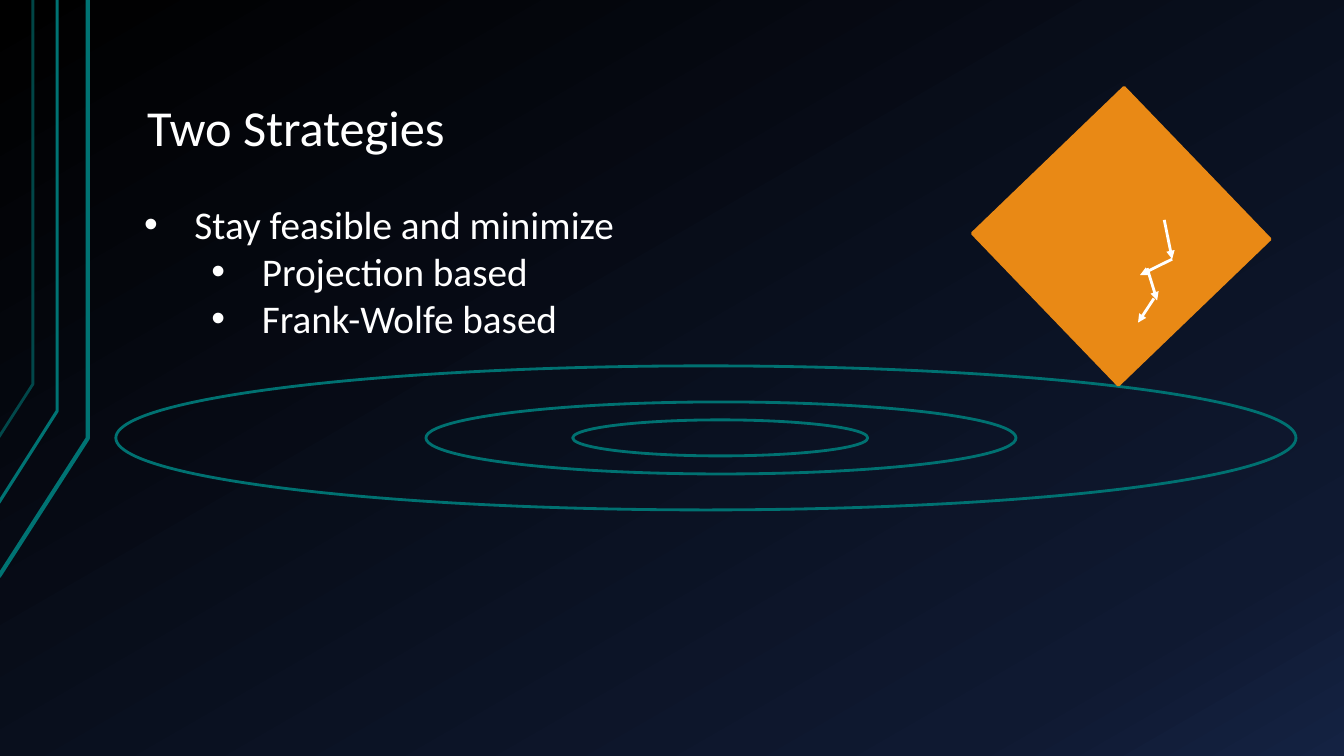
from copy import deepcopy

from lxml.etree import SubElement
from pptx import Presentation
from pptx.dml.color import RGBColor
from pptx.enum.shapes import MSO_CONNECTOR, MSO_SHAPE
from pptx.enum.text import MSO_ANCHOR, MSO_AUTO_SIZE, PP_ALIGN
from pptx.oxml.ns import qn
from pptx.util import Cm, Pt

COLORS = {
    "black": "000000",
    "navy": "0F1931",
    "blue": "142242",
    "edge": "007373",
    "ripple": "007171",
    "orange": "E98915",
    "white": "FFFFFF",
}


def color(name):
    """Return the named colour."""
    return RGBColor.from_string(COLORS[name])


def style_line(shape, color_name, width):
    """Give a shape or connector a solid line."""
    shape.line.color.rgb = color(color_name)
    shape.line.width = Pt(width)


def write_text(paragraph, text, size=28, bullet_indent=None, level=0, line_spacing=None):
    """Write formatted text, with a hanging bullet if an indent is given."""
    paragraph.alignment = PP_ALIGN.LEFT
    paragraph.level = level
    if line_spacing:
        paragraph.line_spacing = line_spacing
    run = paragraph.add_run()
    run.text = text
    run.font.name = "Calibri"
    run.font.size = Pt(size)
    run.font.color.rgb = color("white")
    if bullet_indent:
        properties = paragraph._p.get_or_add_pPr()
        properties.set("marL", str(Cm(bullet_indent)))
        properties.set("indent", str(Cm(-1.27)))
        SubElement(properties, qn("a:buFont"), typeface="Arial")
        SubElement(properties, qn("a:buChar"), char="•")


def paint_background(slide):
    """Fill the background with a diagonal three-stop gradient."""
    fill = slide.background.fill
    fill.gradient()
    fill.gradient_angle = 300
    stop_list = slide.element.find(".//" + qn("a:gsLst"))
    stop_list.append(deepcopy(stop_list[-1]))
    stops = [(0, "black"), (0.85, "navy"), (1, "blue")]
    for stop, (position, name) in zip(fill.gradient_stops, stops):
        stop.position = position
        stop.color.rgb = color(name)


def add_edge_lines(slide, left, top):
    """Draw the three bent lines along the left edge."""
    group = slide.shapes.add_group_shape()
    edges = [(2.24, 11.05, 14.53, 3, 100), (1.47, 10.36, 12.67, 2.25, 100), (0.86, 9.68, 11.02, 2, 60)]
    for x, bend, end, width, opacity in edges:
        builder = group.shapes.build_freeform(Cm(left), Cm(top + end))
        builder.add_line_segments(
            [(Cm(left + x), Cm(top + bend)), (Cm(left + x), Cm(top))], close=False
        )
        shape = builder.convert_to_shape()
        shape.fill.background()
        shape.shadow.inherit = False
        style_line(shape, "edge", width)
        if opacity < 100:
            line_color = shape.line._ln.find(".//" + qn("a:srgbClr"))
            SubElement(line_color, qn("a:alpha"), val=str(opacity * 1000))


def add_title(slide, left, top, width, height):
    """Place and format the title."""
    title = slide.shapes.title
    title.left, title.top, title.width, title.height = map(Cm, (left, top, width, height))
    frame = title.text_frame
    frame.auto_size = MSO_AUTO_SIZE.NONE
    frame.vertical_anchor = MSO_ANCHOR.BOTTOM
    frame.margin_left = frame.margin_right = Cm(0.33)
    frame.margin_top = frame.margin_bottom = Cm(0.18)
    write_text(frame.paragraphs[0], "Two Strategies", size=36, line_spacing=0.9)


def add_ripples(slide, left, top, width, height):
    """Draw three ellipses, each half the size of the one before."""
    group = slide.shapes.add_group_shape()
    middle = top + height / 2
    for step, shift in enumerate((0, 0.38, 0.36)):
        ripple_width, ripple_height = width / 2**step, height / 2**step
        ripple = group.shapes.add_shape(
            MSO_SHAPE.OVAL,
            Cm(left + shift + (width - ripple_width) / 2),
            Cm(middle - ripple_height / 2),
            Cm(ripple_width),
            Cm(ripple_height),
        )
        ripple.fill.background()
        ripple.shadow.inherit = False
        style_line(ripple, "ripple", 2)


def add_feasible_region(slide, left, top, side):
    """Draw the turned square and the descent steps inside it."""
    square = slide.shapes.add_shape(MSO_SHAPE.RECTANGLE, Cm(left), Cm(top), Cm(side), Cm(side))
    square.rotation = 46.1
    square.fill.solid()
    square.fill.fore_color.rgb = color("orange")
    square.shadow.inherit = False
    style_line(square, "orange", 2)

    group = slide.shapes.add_group_shape()
    steps = [
        (3.74, 2.24, 3.94, 3.23),
        (3.94, 3.23, 3.13, 3.63),
        (3.31, 3.46, 3.56, 4.27),
        (3.48, 4.22, 3.08, 4.83),
    ]
    for start_x, start_y, end_x, end_y in steps:
        arrow = group.shapes.add_connector(
            MSO_CONNECTOR.STRAIGHT,
            Cm(left + start_x),
            Cm(top + start_y),
            Cm(left + end_x),
            Cm(top + end_y),
        )
        style_line(arrow, "white", 2)
        SubElement(arrow.line._ln, qn("a:tailEnd"), type="triangle")
        SubElement(arrow._element.spPr, qn("a:effectLst"))


def add_strategy_list(slide, left, top, width, height):
    """Write the bulleted list of strategies."""
    frame = slide.shapes.add_textbox(Cm(left), Cm(top), Cm(width), Cm(height)).text_frame
    frame.word_wrap = True
    frame.auto_size = MSO_AUTO_SIZE.SHAPE_TO_FIT_TEXT
    items = [
        ("Stay feasible and minimize", 0, 1.27),
        ("Projection based", 1, 2.97),
        ("Frank-Wolfe based", 1, 2.97),
    ]
    for number, (text, level, indent) in enumerate(items):
        paragraph = frame.add_paragraph() if number else frame.paragraphs[0]
        write_text(paragraph, text, bullet_indent=indent, level=level)


def main():
    """Build the slide and save it."""
    presentation = Presentation()
    presentation.slide_width, presentation.slide_height = Cm(33.87), Cm(19.05)
    slide = presentation.slides.add_slide(presentation.slide_layouts[5])
    paint_background(slide)
    add_edge_lines(slide, left=-0.03, top=0)
    add_title(slide, left=3.38, top=0.76, width=28.78, height=3.4)
    add_ripples(slide, left=2.92, top=9.22, width=29.74, height=3.63)
    add_feasible_region(slide, left=25.6, top=3.3, side=5.31)
    add_strategy_list(slide, left=3.38, top=4.93, width=15.14, height=3.84)
    presentation.save("out.pptx")


if __name__ == "__main__":
    main()
